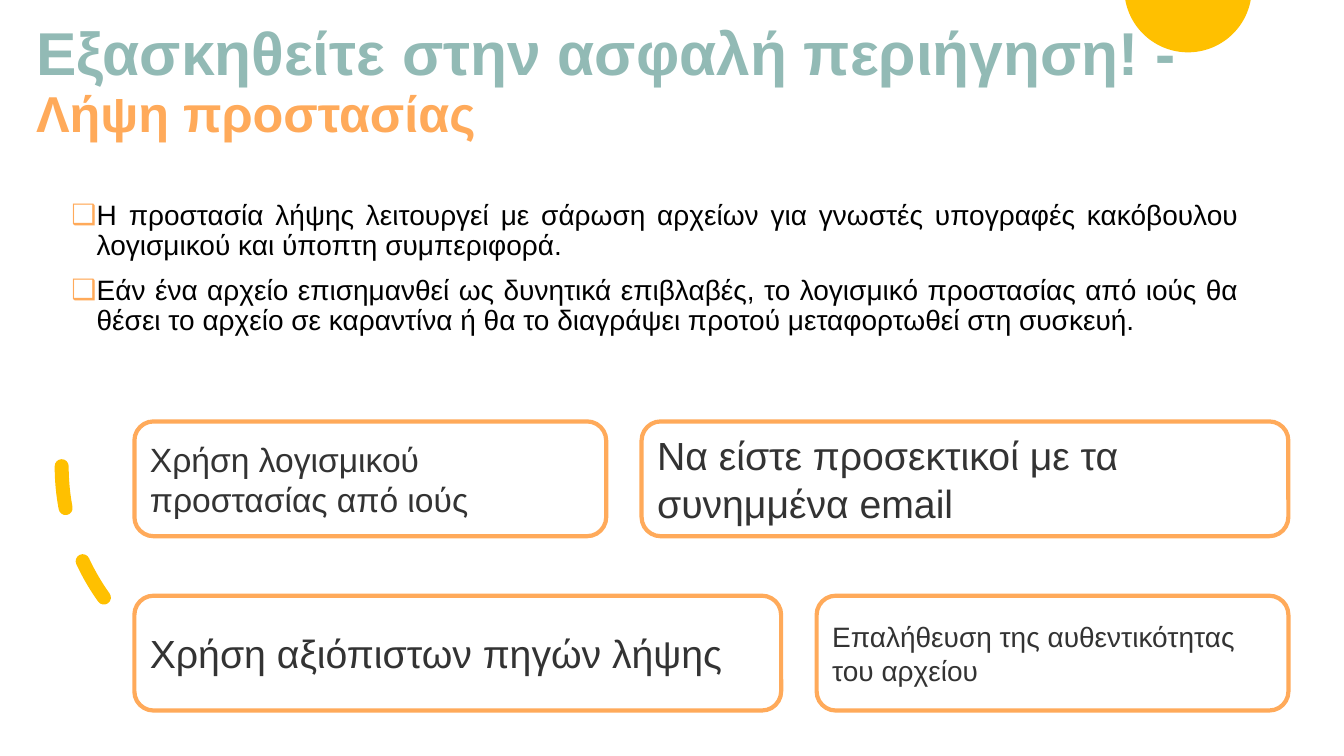
import math
from lxml import etree
from pptx import Presentation
from pptx import util as u
from pptx.dml.color import RGBColor
from pptx.enum import dml, shapes, text
from pptx.oxml.ns import qn

Pt = u.Pt
FONT = "Arial"
SAGE = RGBColor(0x92, 0xBA, 0xB5)
ORANGE = RGBColor(0xFF, 0xAA, 0x5A)
AMBER = RGBColor(0xFF, 0xC0, 0x00)
WHITE = RGBColor(0xFF, 0xFF, 0xFF)
BLACK = RGBColor(0, 0, 0)
CHARCOAL = RGBColor(0x33, 0x33, 0x33)

TITLE = [("Εξασκηθείτε στην ασφαλή περιήγηση! - ", 43.2, SAGE),
         ("Λήψη προστασίας", 36, ORANGE)]
POINTS = [
    "Η προστασία λήψης λειτουργεί με σάρωση αρχείων για γνωστές υπογραφές "
    "κακόβουλου λογισμικού και ύποπτη συμπεριφορά. ",
    "Εάν ένα αρχείο επισημανθεί ως δυνητικά επιβλαβές, το λογισμικό προστασίας "
    "από ιούς θα θέσει το αρχείο σε καραντίνα ή θα το διαγράψει προτού "
    "μεταφορτωθεί στη συσκευή.",
]
# Each row of tips: text, font size, width, outline
ROUND = shapes.MSO_SHAPE.ROUNDED_RECTANGLE
NARROW, WIDE = 337, 462
TIP_ROWS = [
    [("Χρήση λογισμικού προστασίας από ιούς", 24, NARROW,
      shapes.MSO_SHAPE.FLOWCHART_ALTERNATE_PROCESS),
     ("Να είστε προσεκτικοί με τα συνημμένα email", 28, WIDE, ROUND)],
    [("Χρήση αξιόπιστων πηγών λήψης", 28, WIDE, ROUND),
     ("Επαλήθευση της αυθεντικότητας του αρχείου", 20, NARROW, ROUND)],
]


def style(run, size, color, bold=False):
    run.font.name = FONT
    run.font.size = Pt(size)
    run.font.bold = bold
    run.font.color.rgb = color


def add_text_frame(slide, left, top, width, height, anchor):
    box = slide.shapes.add_textbox(Pt(left), Pt(top), Pt(width), Pt(height))
    frame = box.text_frame
    frame.word_wrap = True
    frame.vertical_anchor = anchor
    return frame


def add_bullet(paragraph, indent):
    props = paragraph._p.get_or_add_pPr()
    props.set("marL", str(Pt(indent)))
    props.set("indent", str(-Pt(indent)))
    color = etree.SubElement(props, qn("a:buClr"))
    etree.SubElement(color, qn("a:srgbClr")).set("val", str(ORANGE))
    etree.SubElement(props, qn("a:buFont")).set("typeface", FONT)
    etree.SubElement(props, qn("a:buChar")).set("char", "❑")


def draw_sun(slide, left, top, width, height):
    """Disc cut off by the top edge; the box is its visible segment."""
    radius = (height ** 2 + (width / 2) ** 2) / (2 * height)
    center_x, center_y = left + width / 2, top + height - radius
    start = math.asin((top - center_y) / radius)
    steps = 60
    angles = [start + (math.pi - 2 * start) * i / steps for i in range(steps + 1)]
    rim = [(Pt(center_x + radius * math.cos(a)), Pt(center_y + radius * math.sin(a)))
           for a in angles]
    builder = slide.shapes.build_freeform(*rim[0])
    builder.add_line_segments(rim[1:], close=True)
    sun = builder.convert_to_shape()
    sun.shadow.inherit = False
    sun.fill.solid()
    sun.fill.fore_color.rgb = AMBER
    sun.line.fill.background()


def draw_title(slide, left, top, width, height):
    frame = add_text_frame(slide, left, top, width, height, text.MSO_ANCHOR.MIDDLE)
    heading = frame.paragraphs[0]
    heading.line_spacing = 0.9
    for words, size, color in TITLE:
        run = heading.add_run()
        run.text = words
        style(run, size, color, bold=True)


def draw_dashed_arc(slide, left, top, side):
    arc = slide.shapes.add_shape(shapes.MSO_SHAPE.ARC, Pt(left), Pt(top),
                                 Pt(side), Pt(side))
    arc.shadow.inherit = False
    arc.rotation = 270
    arc._element.spPr.find(qn("a:xfrm")).set("flipH", "1")
    arc.fill.background()
    arc.line.color.rgb = AMBER
    arc.line.width = Pt(10)
    arc.line.dash_style = dml.MSO_LINE.DASH
    arc.line._get_or_add_ln().set("cap", "rnd")


def draw_points(slide, left, top, width, height):
    frame = add_text_frame(slide, left, top, width, height, text.MSO_ANCHOR.TOP)
    frame.text = "\n".join(POINTS)
    for i, point in enumerate(frame.paragraphs):
        point.alignment = text.PP_ALIGN.JUSTIFY
        point.line_spacing = 0.9
        point.space_before = Pt(10 if i else 0)
        add_bullet(point, 18)
        style(point.runs[0], 20, BLACK)


def draw_tip(slide, left, top, width, height, words, size, outline):
    tip = slide.shapes.add_shape(outline, Pt(left), Pt(top), Pt(width), Pt(height))
    tip.shadow.inherit = False
    tip.fill.solid()
    tip.fill.fore_color.rgb = WHITE
    tip.line.color.rgb = ORANGE
    tip.line.width = Pt(3)
    frame = tip.text_frame
    frame.text = words
    frame.word_wrap = True
    frame.vertical_anchor = text.MSO_ANCHOR.MIDDLE
    frame.paragraphs[0].alignment = text.PP_ALIGN.LEFT
    style(frame.paragraphs[0].runs[0], size, CHARCOAL)


def draw_tips(slide, left, top, width, height):
    tip_height = 82
    pitch = (height - tip_height) / (len(TIP_ROWS) - 1)
    for i, row in enumerate(TIP_ROWS):
        gap = (width - sum(tip[2] for tip in row)) / (len(row) - 1)
        x = left
        for words, size, tip_width, outline in row:
            draw_tip(slide, x, top + i * pitch, tip_width, tip_height,
                     words, size, outline)
            x += tip_width + gap


def main():
    deck = Presentation()
    deck.slide_width, deck.slide_height = Pt(960), Pt(540)
    slide = deck.slides.add_slide(deck.slide_layouts[6])
    # Heading
    draw_sun(slide, 803.8, 0, 89.6, 37.4)
    draw_title(slide, 18.7, 28.8, 875.5, 61.2)
    # Explanation, with the arc behind it
    draw_dashed_arc(slide, 44, 172, 322)
    draw_points(slide, 44, 140.4, 848, 192)
    # Four tips
    draw_tips(slide, 96, 301, 824.3, 206.5)
    deck.save("out.pptx")


if __name__ == "__main__":
    main()
